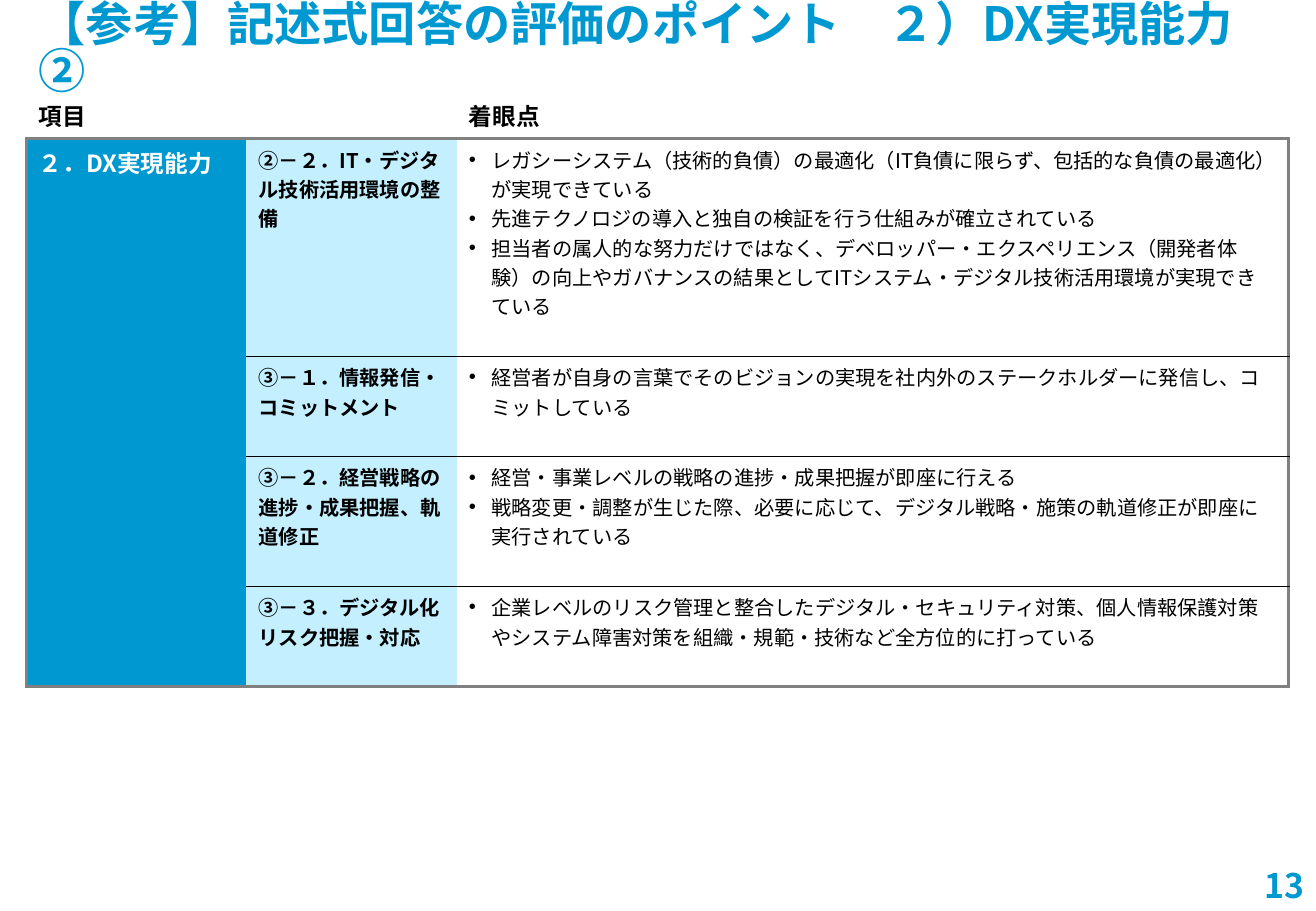
from lxml.etree import SubElement
from pptx import Presentation
from pptx.dml.color import RGBColor
from pptx.enum.text import MSO_ANCHOR as Anchor, MSO_AUTO_SIZE as AutoSize, PP_ALIGN as Align
from pptx.oxml import parse_xml
from pptx.oxml.ns import nsdecls, qn
from pptx.util import Pt

FONT = "Noto Sans CJK JP"
BLUE, PALE, GRAY, BLACK, WHITE = "0098D0", "C3EFFF", "808080", "000000", "FFFFFF"
NO_STYLE = "{2D5ABB26-0587-4C30-8999-92F81FD0307C}"

TITLE = "【参考】記述式回答の評価のポイント　２）DX実現能力②"
PAGE = "13"
HEADINGS = ("項目", "", "着眼点")
CATEGORY = "２．DX実現能力"
CRITERIA = [
    ("②－２．IT・デジタル技術活用環境の整備", [
        "レガシーシステム（技術的負債）の最適化（IT負債に限らず、包括的な負債の最適化）が実現できている",
        "先進テクノロジの導入と独自の検証を行う仕組みが確立されている",
        "担当者の属人的な努力だけではなく、デベロッパー・エクスペリエンス（開発者体験）の向上や"
        "ガバナンスの結果としてITシステム・デジタル技術活用環境が実現できている"]),
    ("③－１．情報発信・コミットメント", [
        "経営者が自身の言葉でそのビジョンの実現を社内外のステークホルダーに発信し、コミットしている"]),
    ("③－２．経営戦略の進捗・成果把握、軌道修正", [
        "経営・事業レベルの戦略の進捗・成果把握が即座に行える",
        "戦略変更・調整が生じた際、必要に応じて、デジタル戦略・施策の軌道修正が即座に実行されている"]),
    ("③－３．デジタル化リスク把握・対応", [
        "企業レベルのリスク管理と整合したデジタル・セキュリティ対策、個人情報保護対策や"
        "システム障害対策を組織・規範・技術など全方位的に打っている"]),
]

COLUMN_WIDTHS = (130.3, 124.6, 493.2)
ROW_HEIGHTS = (27.5, 129, 59.4, 77, 59.4)
LEFT, TABLE_TOP = 15.8, 54.5
INDENT = 13.5
HEADING_FORMAT = {"size": Pt(14), "bold": True}
CRITERION_FORMAT = {"size": Pt(12), "bold": True}
POINT_FORMAT = {"size": Pt(12), "bold": False}


def rgb(value):
    return RGBColor.from_string(value)


def write(paragraph, text, color, formats):
    run = paragraph.add_run()
    run.text = text
    run.font.name = FONT
    run.font.color.rgb = rgb(color)
    for name, value in formats.items():
        setattr(run.font, name, value)
    SubElement(run.font._element, qn("a:ea"), typeface=FONT)


def add_bullet(paragraph):
    properties = paragraph._p.get_or_add_pPr()
    properties.set("marL", str(Pt(INDENT)))
    properties.set("indent", str(-Pt(INDENT)))
    SubElement(properties, qn("a:buFont"), typeface="Arial")
    SubElement(properties, qn("a:buChar"), char="•")


def cell_borders(row, column):
    """Gray frame around the body rows, thin black rules right of the category."""
    frame, rule = (GRAY, 2.25), (BLACK, 0.25)
    last_row, last_column = len(ROW_HEIGHTS) - 1, len(COLUMN_WIDTHS) - 1
    inner = rule if column else None
    if row == 0:
        return {"B": frame}
    return {
        "L": frame if column == 0 else None,
        "R": frame if column == last_column else None,
        "T": frame if row == 1 else inner,
        "B": frame if row == last_row else inner,
    }


def draw_borders(cell, borders):
    properties = cell._tc.get_or_add_tcPr()
    for position, side in enumerate("LRTB"):
        border = borders.get(side)
        if border:
            color, width = border
            line = (f'<a:solidFill><a:srgbClr val="{color}"/></a:solidFill>')
        else:
            width, line = 0, "<a:noFill/>"
        properties.insert(position, parse_xml(
            f'<a:ln{side} {nsdecls("a")} w="{Pt(width)}">{line}</a:ln{side}>'))


def add_criteria_table(slide):
    frame = slide.shapes.add_table(
        len(ROW_HEIGHTS), len(COLUMN_WIDTHS), Pt(LEFT), Pt(TABLE_TOP),
        Pt(sum(COLUMN_WIDTHS)), Pt(sum(ROW_HEIGHTS)))
    table = frame.table
    table.first_row = table.horz_banding = False
    for style in frame._element.iter(qn("a:tableStyleId")):
        style.text = NO_STYLE
    for column, width in zip(table.columns, COLUMN_WIDTHS):
        column.width = Pt(width)
    for row, height in zip(table.rows, ROW_HEIGHTS):
        row.height = Pt(height)

    for column, heading in enumerate(HEADINGS):
        write(table.cell(0, column).text_frame.paragraphs[0], heading, BLACK, HEADING_FORMAT)
    write(table.cell(1, 0).text_frame.paragraphs[0], CATEGORY, WHITE, HEADING_FORMAT)
    for row, (criterion, points) in enumerate(CRITERIA, 1):
        write(table.cell(row, 1).text_frame.paragraphs[0], criterion, BLACK, CRITERION_FORMAT)
        body = table.cell(row, 2).text_frame
        for number, point in enumerate(points):
            paragraph = body.add_paragraph() if number else body.paragraphs[0]
            add_bullet(paragraph)
            write(paragraph, point, BLACK, POINT_FORMAT)

    column_fills = (BLUE, PALE, None)
    for row in range(len(ROW_HEIGHTS)):
        for column, color in enumerate(column_fills):
            cell = table.cell(row, column)
            if row and color:
                cell.fill.solid()
                cell.fill.fore_color.rgb = rgb(color)
            else:
                cell.fill.background()
            draw_borders(cell, cell_borders(row, column))


def format_line(shape, text, box, size, frame_formats, paragraph_formats):
    shape.left, shape.top, shape.width, shape.height = (Pt(length) for length in box)
    frame = shape.text_frame
    insets = {"margin_left": Pt(7.2), "margin_right": Pt(7.2),
              "margin_top": Pt(3.6), "margin_bottom": Pt(3.6)}
    for name, value in {"word_wrap": True, "auto_size": AutoSize.NONE,
                        **insets, **frame_formats}.items():
        setattr(frame, name, value)
    paragraph = frame.paragraphs[0]
    for name, value in paragraph_formats.items():
        setattr(paragraph, name, value)
    write(paragraph, text, BLUE, {"size": Pt(size), "bold": True})


def main():
    deck = Presentation()
    deck.slide_width, deck.slide_height = Pt(780), Pt(540)
    slide = deck.slides.add_slide(deck.slide_layouts[5])
    add_criteria_table(slide)
    page_number = slide.shapes.add_textbox(0, 0, 0, 0)
    format_line(page_number, PAGE, (712, 502.5, 68.4, 37.5), 20,
                {"vertical_anchor": Anchor.BOTTOM}, {"alignment": Align.RIGHT})
    format_line(slide.shapes.title, TITLE, (LEFT, 9.4, 748.8, 41), 28,
                {"vertical_anchor": Anchor.MIDDLE},
                {"alignment": Align.LEFT, "line_spacing": 0.83})
    deck.save("out.pptx")


if __name__ == "__main__":
    main()
